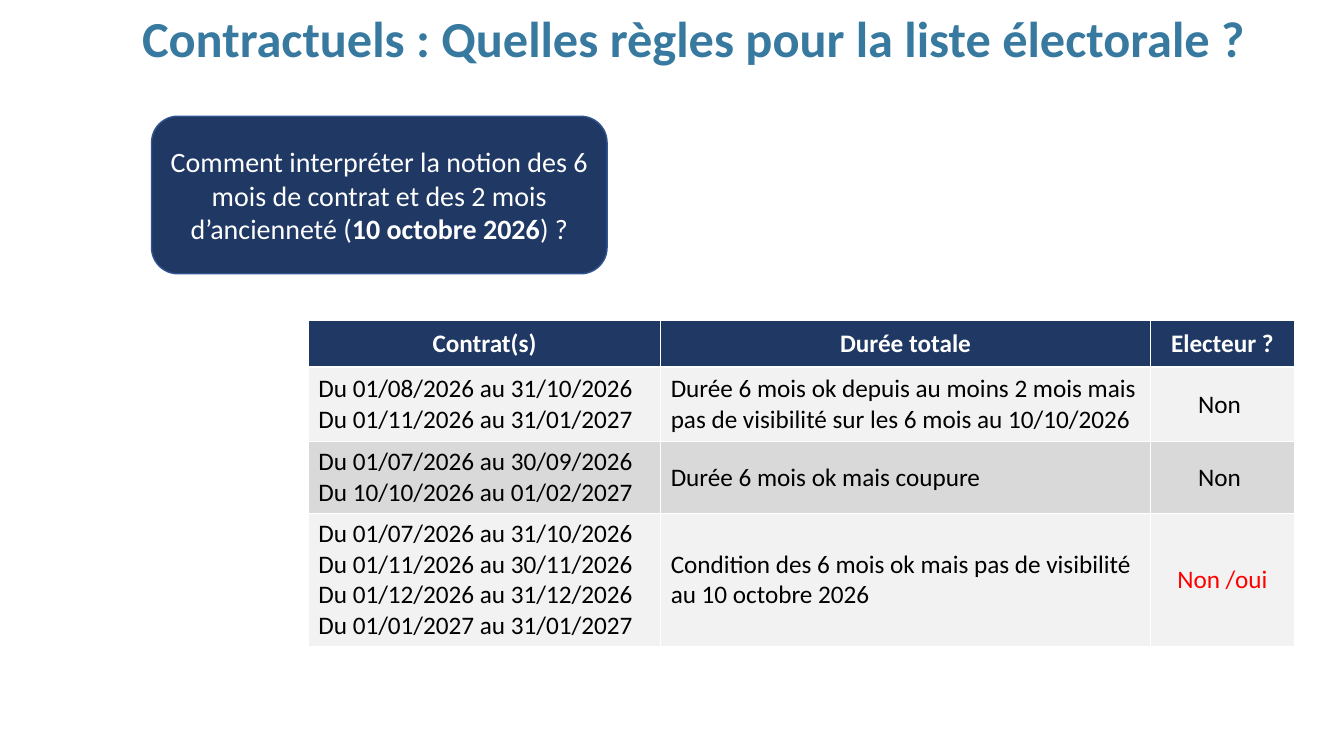
"""Build the slide on electoral list rules for contract staff."""
from dataclasses import dataclass

import pptx
import pptx.dml.color
import pptx.enum.shapes
import pptx.enum.text
import pptx.slide
import pptx.table
import pptx.text.text
import pptx.util
from pptx.dml.color import RGBColor
from pptx.enum.text import MSO_ANCHOR, PP_ALIGN
from pptx.util import Cm

FONT = "Calibri"
NAVY = RGBColor(0x20, 0x38, 0x64)
OUTLINE = RGBColor(0x32, 0x54, 0x91)
TITLE_BLUE = RGBColor(0x38, 0x79, 0xA0)
WHITE = RGBColor(0xFF, 0xFF, 0xFF)
BLACK = RGBColor(0, 0, 0)
RED = RGBColor(0xFF, 0, 0)
LIGHT_GREY = RGBColor(0xF2, 0xF2, 0xF2)
MID_GREY = RGBColor(0xD9, 0xD9, 0xD9)

COLUMN_WIDTHS = (8.88, 12.34, 3.63)


@dataclass(frozen=True)
class ContractCase:
    """One table row: the contracts, their duration and the verdict."""

    contracts: str
    duration: str
    voter: str
    height: float
    fill: RGBColor = LIGHT_GREY
    color: RGBColor = BLACK
    voter_color: RGBColor = BLACK
    header: bool = False


CASES = (
    ContractCase("Contrat(s)", "Durée totale", "Electeur ?", 1.17,
                 NAVY, WHITE, WHITE, True),
    ContractCase("Du 01/08/2026 au 31/10/2026\nDu 01/11/2026 au 31/01/2027",
                 "Durée 6 mois ok depuis au moins 2 mois mais pas de visibilité "
                 "sur les 6 mois au 10/10/2026", "Non ", 1.88),
    ContractCase("Du 01/07/2026 au 30/09/2026\nDu 10/10/2026 au 01/02/2027",
                 "Durée 6 mois ok mais coupure", "Non ", 1.78, MID_GREY),
    ContractCase("Du 01/07/2026 au 31/10/2026\nDu 01/11/2026 au 30/11/2026\n"
                 "Du 01/12/2026 au 31/12/2026\nDu 01/01/2027 au 31/01/2027",
                 "Condition des 6 mois ok mais pas de visibilité au 10 octobre 2026",
                 "Non /oui", 3.3, voter_color=RED),
)


def style_paragraph(para: pptx.text.text._Paragraph, size: int, color: RGBColor,
                    align: PP_ALIGN, bold: bool | None = None) -> None:
    """Set the font and alignment of a paragraph."""
    para.alignment = align
    para.font.name = FONT
    para.font.size = pptx.util.Pt(size)
    para.font.color.rgb = color
    para.font.bold = bold


def add_title(page: pptx.slide.Slide) -> None:
    """Add the slide title."""
    box = page.shapes.add_textbox(Cm(3.33), Cm(0), Cm(28.4), Cm(2.08))
    frame = box.text_frame
    frame.word_wrap = True
    frame.vertical_anchor = MSO_ANCHOR.MIDDLE
    frame.text = "Contractuels : Quelles règles pour la liste électorale ?"
    para = frame.paragraphs[0]
    para.line_spacing = 0.9
    style_paragraph(para, 36, TITLE_BLUE, PP_ALIGN.LEFT, True)


def add_question(page: pptx.slide.Slide) -> None:
    """Add the rounded box that asks the question."""
    box = page.shapes.add_shape(pptx.enum.shapes.MSO_SHAPE.ROUNDED_RECTANGLE,
                                Cm(3.82), Cm(2.93), Cm(11.48), Cm(3.97))
    box.shadow.inherit = False
    box.fill.solid()
    box.fill.fore_color.rgb = NAVY
    box.line.color.rgb = OUTLINE
    box.line.width = pptx.util.Pt(1)
    frame = box.text_frame
    frame.word_wrap = True
    frame.vertical_anchor = MSO_ANCHOR.MIDDLE
    para = frame.paragraphs[0]
    style_paragraph(para, 20, WHITE, PP_ALIGN.CENTER)
    for text, bold in (
        ("Comment interpréter la notion des 6 mois de contrat et des 2 mois "
         "d’ancienneté (", False),
        ("10 octobre 2026", True),
        (") ?", False),
    ):
        span = para.add_run()
        span.text = text
        span.font.bold = bold


def fill_cell(cell: pptx.table._Cell, text: str, case: ContractCase,
              color: RGBColor, align: PP_ALIGN) -> None:
    """Write and colour one table cell."""
    cell.fill.solid()
    cell.fill.fore_color.rgb = case.fill
    cell.vertical_anchor = MSO_ANCHOR.MIDDLE
    cell.text = text
    for para in cell.text_frame.paragraphs:
        style_paragraph(para, 18, color, align, case.header)


def add_cases(page: pptx.slide.Slide) -> None:
    """Add the table of contract cases."""
    table = page.shapes.add_table(
        len(CASES), len(COLUMN_WIDTHS), Cm(7.77), Cm(8.08),
        Cm(sum(COLUMN_WIDTHS)), Cm(sum(case.height for case in CASES))).table
    for column, width in zip(table.columns, COLUMN_WIDTHS):
        column.width = Cm(width)
    for row, case in zip(table.rows, CASES):
        row.height = Cm(case.height)
        align = PP_ALIGN.CENTER if case.header else PP_ALIGN.LEFT
        contracts, duration, voter = row.cells
        fill_cell(contracts, case.contracts, case, case.color, align)
        fill_cell(duration, case.duration, case, case.color, align)
        fill_cell(voter, case.voter, case, case.voter_color, PP_ALIGN.CENTER)


def main() -> None:
    """Create and save the deck."""
    deck = pptx.Presentation()
    deck.slide_width, deck.slide_height = Cm(33.87), Cm(19.05)
    page = deck.slides.add_slide(deck.slide_layouts[6])
    add_cases(page)
    add_question(page)
    add_title(page)
    deck.save("out.pptx")


if __name__ == "__main__":
    main()
